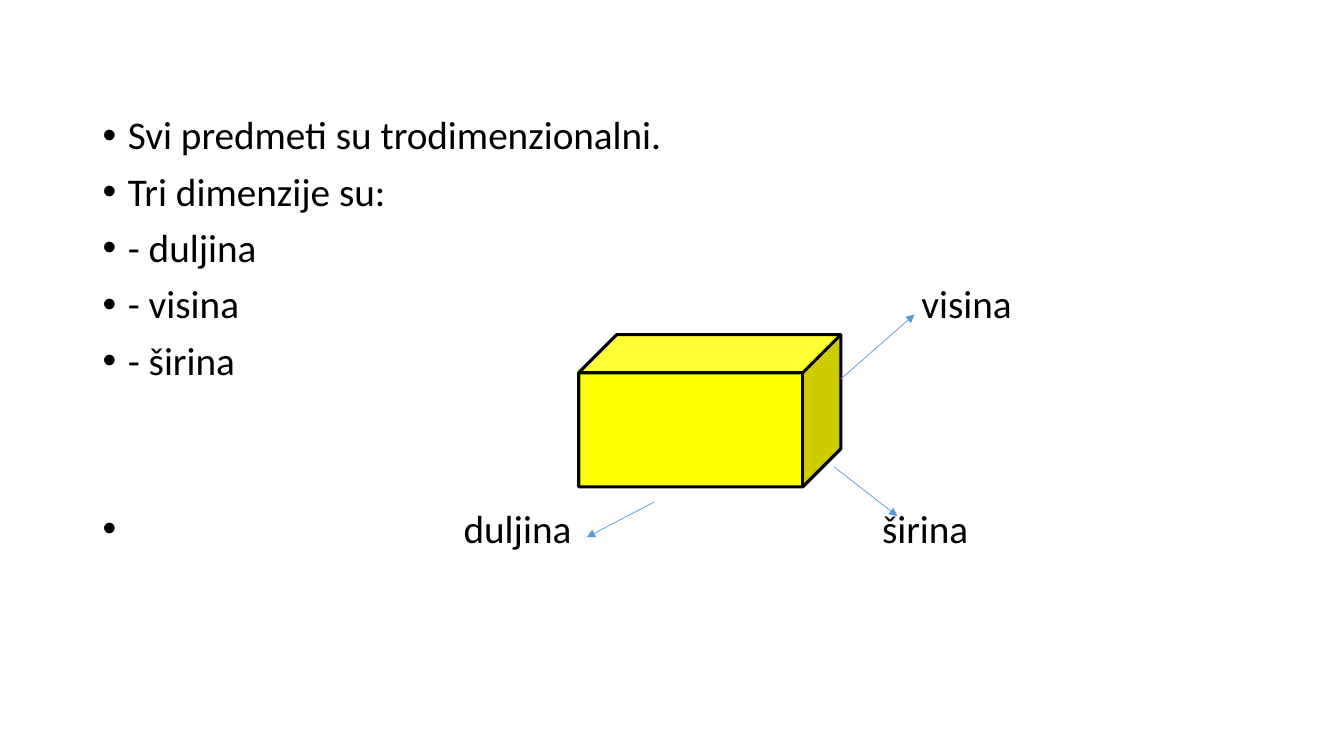
from lxml.etree import SubElement
from pptx import Presentation
from pptx.dml.color import RGBColor
from pptx.enum.shapes import MSO_CONNECTOR as Connector, MSO_SHAPE as Preset
from pptx.oxml.ns import qn
from pptx.util import Inches, Pt

BLACK = RGBColor(0x00, 0x00, 0x00)
YELLOW = RGBColor(0xFF, 0xFF, 0x00)
BLUE = RGBColor(0x5B, 0x9B, 0xD5)

LINES = [
    ("Svi predmeti su trodimenzionalni.", 0, []),
    ("Tri dimenzije su:", 10, []),
    ("- duljina", 10, []),
    ("- visina\tvisina", 10, [8.12]),
    ("- širina", 10, []),
    ("\tduljina\tširina", 90, [3.58, 7.73]),
]
ARROWS = [
    (6.49, 4.98, 5.82, 5.33),
    (8.27, 4.63, 8.9, 5.12),
    (8.34, 3.76, 9.07, 3.12),
]

presentation = Presentation()
presentation.slide_width = Inches(13.33)
presentation.slide_height = Inches(7.5)
slide = presentation.slides.add_slide(presentation.slide_layouts[6])

body = slide.shapes.add_textbox(Inches(0.92), Inches(1.1), Inches(11.5), Inches(5.65))
frame = body.text_frame
frame.word_wrap = True
for index, (text, space_before, tab_stops) in enumerate(LINES):
    paragraph = frame.paragraphs[0] if index == 0 else frame.add_paragraph()
    paragraph.text = text
    properties = paragraph._p.get_or_add_pPr()
    properties.set("marL", str(Inches(0.25)))
    properties.set("indent", str(-Inches(0.25)))
    SubElement(properties, qn("a:buFont"), typeface="Arial")
    SubElement(properties, qn("a:buChar"), char="•")
    if tab_stops:
        tab_list = SubElement(properties, qn("a:tabLst"))
        for stop in tab_stops:
            SubElement(tab_list, qn("a:tab"), pos=str(Inches(stop)), algn="l")
    paragraph.line_spacing = 0.9
    paragraph.space_before = Pt(space_before)
    paragraph.font.name = "Calibri"
    paragraph.font.size = Pt(28)
    paragraph.font.color.rgb = BLACK

cuboid = slide.shapes.add_shape(Preset.CUBE, Inches(5.74), Inches(3.32), Inches(2.6), Inches(1.51))
cuboid.shadow.inherit = False
cuboid.fill.solid()
cuboid.fill.fore_color.rgb = YELLOW
cuboid.line.color.rgb = BLACK
cuboid.line.width = Pt(2.25)

for ends in ARROWS:
    arrow = slide.shapes.add_connector(Connector.STRAIGHT, *map(Inches, ends))
    arrow.line.color.rgb = BLUE
    arrow.line.width = Pt(0.5)
    SubElement(arrow.line._get_or_add_ln(), qn("a:tailEnd"), type="triangle")
    SubElement(arrow._element.spPr, qn("a:effectLst"))

presentation.save("out.pptx")
